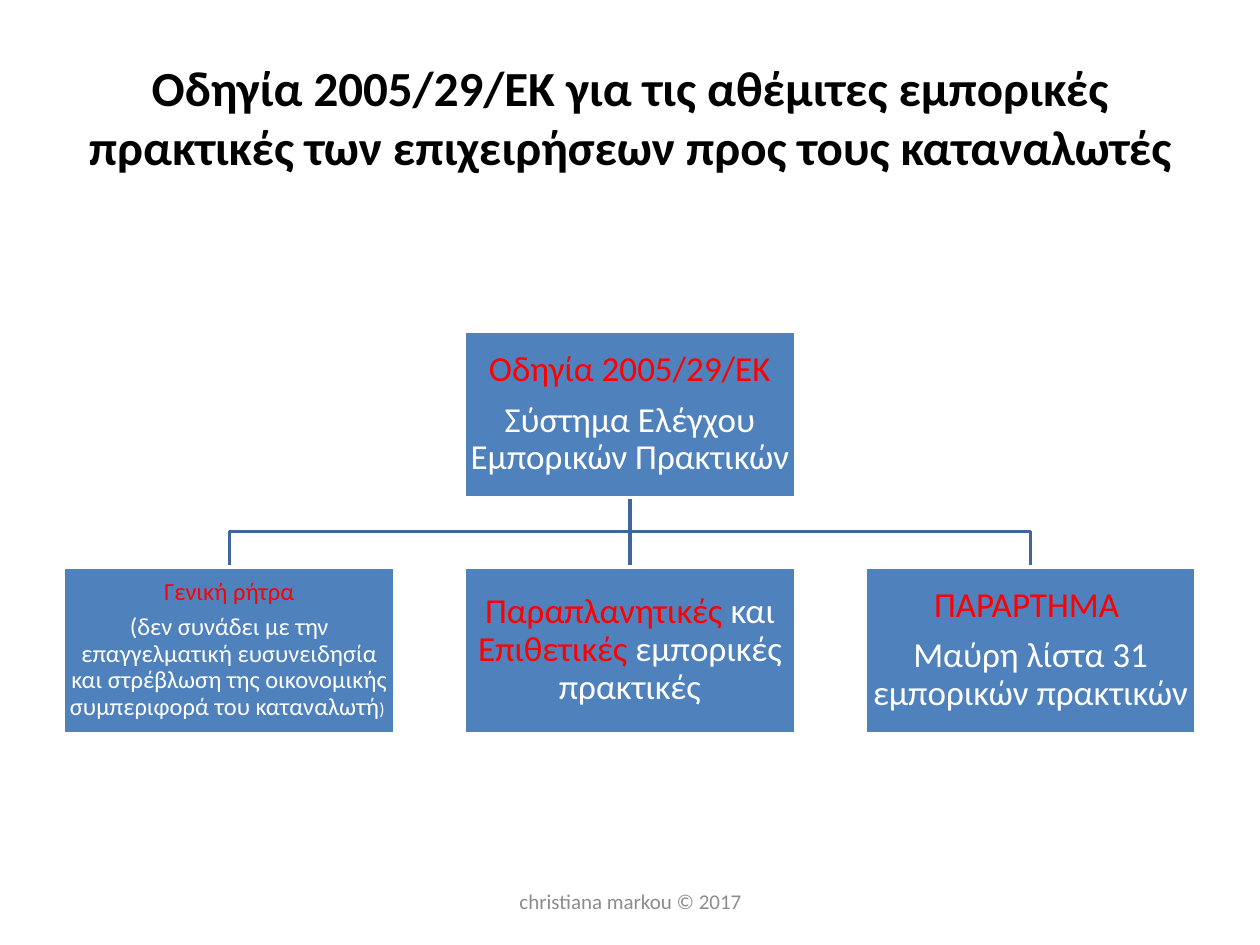
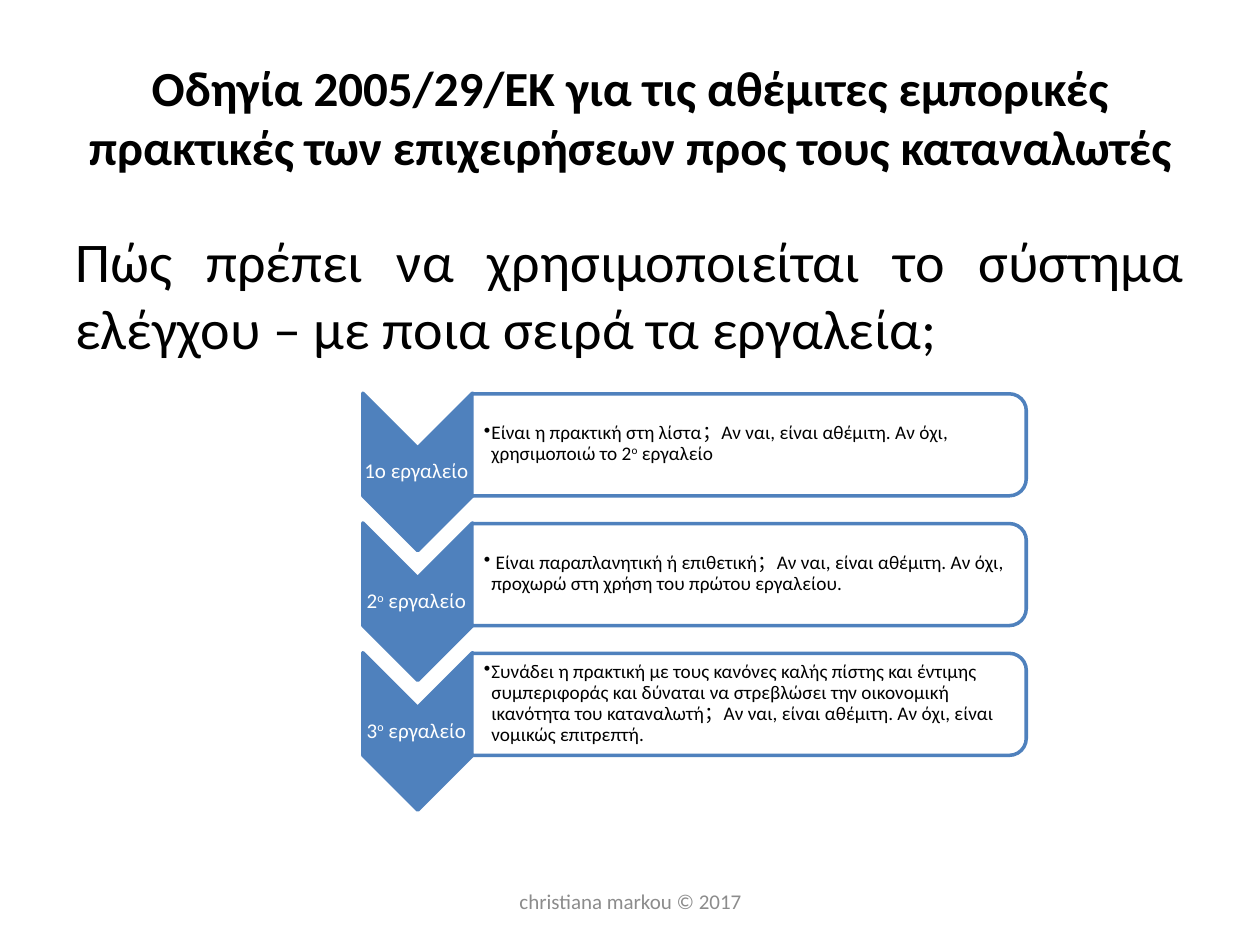
"""Build two slides on the control system of Directive 2005/29/EK."""
from dataclasses import dataclass

from lxml import etree
from pptx import Presentation
from pptx import util as u
from pptx.dml import color
from pptx.enum import shapes, text
from pptx.oxml import ns


@dataclass(frozen=True)
class Theme:
    font: str = "Calibri"
    blue: str = "4F81BD"
    branch: str = "3F6797"
    red: str = "FF0000"
    white: str = "FFFFFF"
    black: str = "000000"
    grey: str = "8C8C8C"
    title: int = 28
    question: int = 32
    node: int = 20
    small_node: int = 14
    bracket: int = 10
    label: int = 12
    answer: int = 11
    footer: int = 12
    line: int = 2


theme = Theme()
rgb = color.RGBColor.from_string
TITLE = ("Οδηγία 2005/29/EK για τις αθέμιτες εμπορικές πρακτικές "
         "των επιχειρήσεων προς τους καταναλωτές")
QUESTION = "Πώς πρέπει να χρησιμοποιείται το σύστημα ελέγχου – με ποια σειρά τα εργαλεία;"
FOOTER = "christiana markou © 2017"
CENTER = text.PP_ALIGN.CENTER
RAISED = "ο"


def write(box, paragraphs, size, align=CENTER, inset=None, leading=None, after=0,
          anchor=text.MSO_ANCHOR.MIDDLE):
    """Fill a box with paragraphs, each a list of (text, colour) or (text, colour, size)."""
    frame = box.text_frame
    frame.word_wrap = True
    frame.vertical_anchor = anchor
    if inset is not None:
        frame.margin_left = u.Inches(inset)
        frame.margin_right = frame.margin_top = frame.margin_bottom = u.Inches(0.01)
    for number, parts in enumerate(paragraphs):
        para = frame.add_paragraph() if number else frame.paragraphs[0]
        para.alignment = align
        if leading:
            para.line_spacing = leading
            para.space_after = u.Pt(size * after)
        for words, tint, *own_size in parts:
            span = para.add_run()
            span.text = words
            span.font.name = theme.font
            span.font.size = u.Pt(own_size[0] if own_size else size)
            span.font.color.rgb = rgb(tint)
            if words == RAISED:
                span.font._element.set("baseline", "30000")
    return frame


def draw(page, kind, place, fill, line):
    """Add a flat preset shape with a solid fill and outline."""
    shape = page.shapes.add_shape(kind, *map(u.Inches, place))
    shape.shadow.inherit = False
    shape.fill.solid()
    shape.fill.fore_color.rgb = rgb(fill)
    shape.line.color.rgb = rgb(line)
    shape.line.width = u.Pt(theme.line)
    return shape


deck = Presentation()
deck.slide_width, deck.slide_height = u.Inches(10), u.Inches(7.5)
pages = [deck.slides.add_slide(deck.slide_layouts[6]) for _ in range(2)]
tree_page, steps_page = pages

for page in pages:
    box = page.shapes.add_textbox(*map(u.Inches, (0.5, 0.3, 9, 1.25)))
    frame = write(box, [[(TITLE, theme.black)]], theme.title)
    frame.paragraphs[0].runs[0].font.bold = True
    box = page.shapes.add_textbox(*map(u.Inches, (3.42, 6.95, 3.17, 0.4)))
    write(box, [[(FOOTER, theme.grey)]], theme.footer)

node_width, node_height = 2.63, 1.32
root_top, child_top = 2.63, 4.5
root_bottom, bar_top = 3.95, 4.22
column_centers = (1.82, 5, 8.18)

for center in (column_centers[0], column_centers[2]):
    outline = tree_page.shapes.build_freeform(u.Inches(5), u.Inches(root_bottom))
    corners = [(5, bar_top), (center, bar_top), (center, child_top)]
    outline.add_line_segments([(u.Inches(x), u.Inches(y)) for x, y in corners], close=False)
    branch = outline.convert_to_shape()
    branch.shadow.inherit = False
    branch.fill.background()
    branch.line.color.rgb = rgb(theme.branch)
    branch.line.width = u.Pt(theme.line)

trunk = tree_page.shapes.add_connector(
    shapes.MSO_CONNECTOR.STRAIGHT,
    *map(u.Inches, (5, root_bottom, 5, child_top)))
trunk.line.color.rgb = rgb(theme.branch)
trunk.line.width = u.Pt(theme.line)
etree.SubElement(trunk._element.spPr, ns.qn("a:effectLst"))

nodes = [
    (column_centers[1], root_top, theme.node, [
        [("Οδηγία 2005/29/ΕΚ", theme.red)],
        [("Σύστημα Ελέγχου Εμπορικών Πρακτικών", theme.white)]]),
    (column_centers[0], child_top, theme.small_node, [
        [("Γενική ρήτρα", theme.red)],
        [("(δεν συνάδει με την επαγγελματική ευσυνειδησία και στρέβλωση "
          "της οικονομικής συμπεριφορά του καταναλωτή", theme.white),
         (") ", theme.white, theme.bracket)]]),
    (column_centers[1], child_top, theme.node, [
        [("Παραπλανητικές", theme.red), (" και ", theme.white),
         ("Επιθετικές", theme.red), (" εμπορικές πρακτικές", theme.white)]]),
    (column_centers[2], child_top, theme.node, [
        [("ΠΑΡΑΡΤΗΜΑ ", theme.red)],
        [("Μαύρη λίστα 31 εμπορικών πρακτικών", theme.white)]]),
]
for center, top, size, paragraphs in nodes:
    place = (center - node_width / 2, top, node_width, node_height)
    node = draw(tree_page, shapes.MSO_SHAPE.RECTANGLE, place, theme.blue, theme.white)
    write(node, paragraphs, size, inset=0.01, leading=0.9, after=0.35)

box = steps_page.shapes.add_textbox(*map(u.Inches, (0.5, 1.75, 9, 4.95)))
write(box, [[(QUESTION, theme.black)]], theme.question,
      align=text.PP_ALIGN.JUSTIFY, anchor=text.MSO_ANCHOR.TOP)

step_pitch = 1.03
steps = [
    (["1o εργαλείο"],
     ["Είναι η πρακτική στη λίστα；Aν ναι, είναι αθέμιτη. Αν όχι, χρησιμοποιώ το 2",
      RAISED, " εργαλείο"]),
    (["2", RAISED, " εργαλείο"],
     [" Είναι παραπλανητική ή επιθετική；Aν ναι, είναι αθέμιτη. Αν όχι, "
      "προχωρώ στη χρήση του πρώτου εργαλείου."]),
    (["3", RAISED, " εργαλείο"],
     ["Συνάδει η πρακτική με τους κανόνες καλής πίστης και έντιμης συμπεριφοράς "
      "και δύναται να στρεβλώσει την οικονομική ικανότητα του καταναλωτή；Aν ναι, "
      "είναι αθέμιτη. Αν όχι, είναι νομικώς επιτρεπτή."]),
]
for number, (label, answer) in enumerate(steps):
    shift = number * step_pitch
    chevron = draw(steps_page, shapes.MSO_SHAPE.CHEVRON, (2.69, 3.31 + shift, 1.25, 0.87),
                   theme.blue, theme.blue)
    panel = draw(steps_page, shapes.MSO_SHAPE.ROUND_2_SAME_RECTANGLE,
                 (5.54, 1.33 + shift, 0.81, 4.4), theme.white, theme.blue)
    chevron.rotation = panel.rotation = 90

    box = steps_page.shapes.add_textbox(*map(u.Inches, (2.87, 3.56 + shift, 0.87, 0.37)))
    write(box, [[(words, theme.white) for words in label]], theme.label,
          inset=0.01, leading=0.9, after=0.35)

    box = steps_page.shapes.add_textbox(*map(u.Inches, (3.75, 3.16 + shift, 4.36, 0.73)))
    frame = write(box, [[(words, theme.black) for words in answer]], theme.answer,
                  align=text.PP_ALIGN.LEFT, inset=0.09, leading=0.9, after=0.15)
    settings = frame.paragraphs[0]._p.get_or_add_pPr()
    settings.set("marL", str(u.Inches(0.06)))
    settings.set("indent", str(-u.Inches(0.06)))
    etree.SubElement(settings, ns.qn("a:buChar"), char="•")

deck.save("out.pptx")
